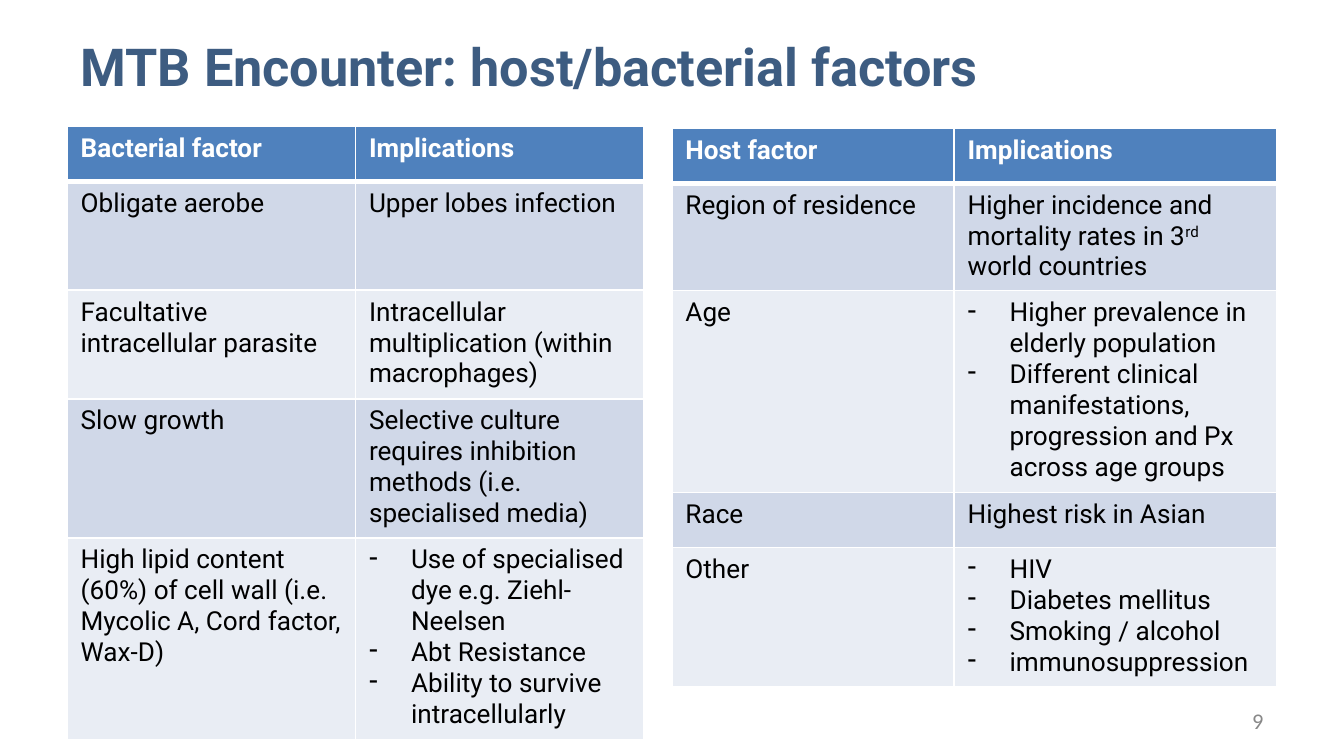
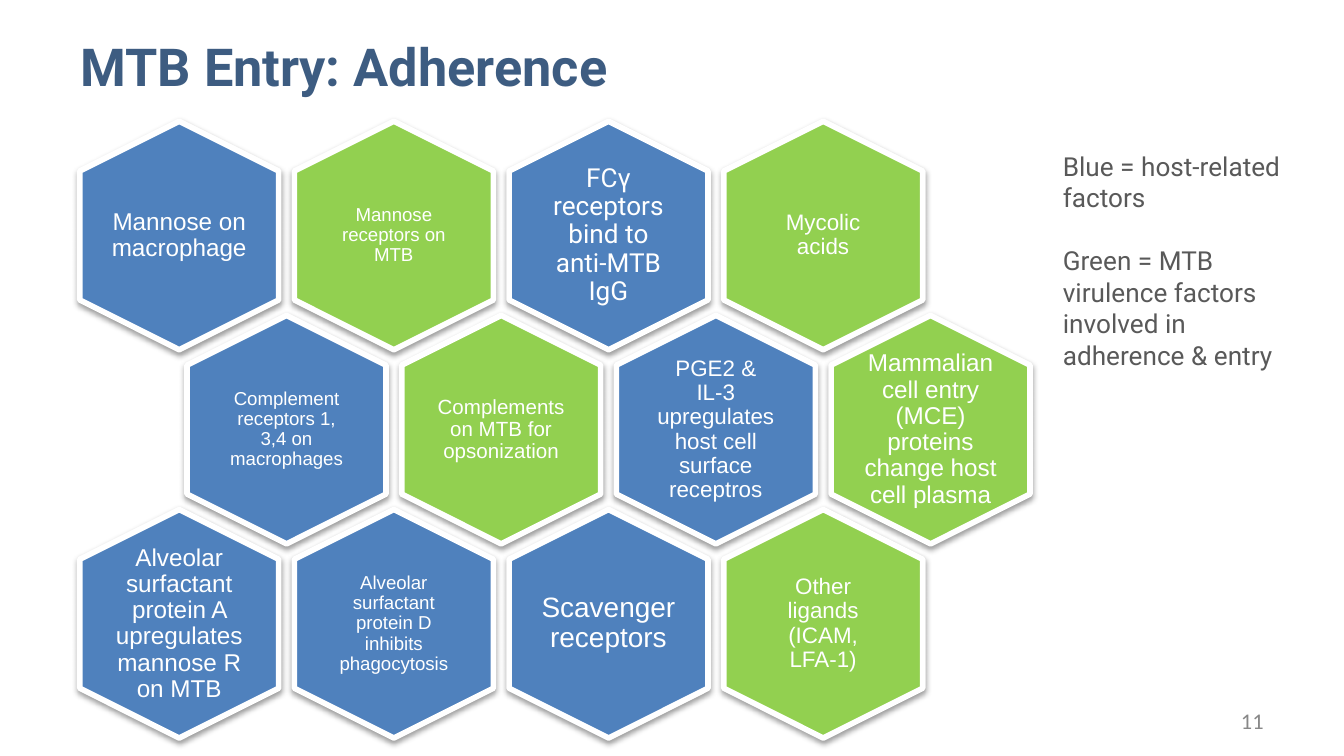
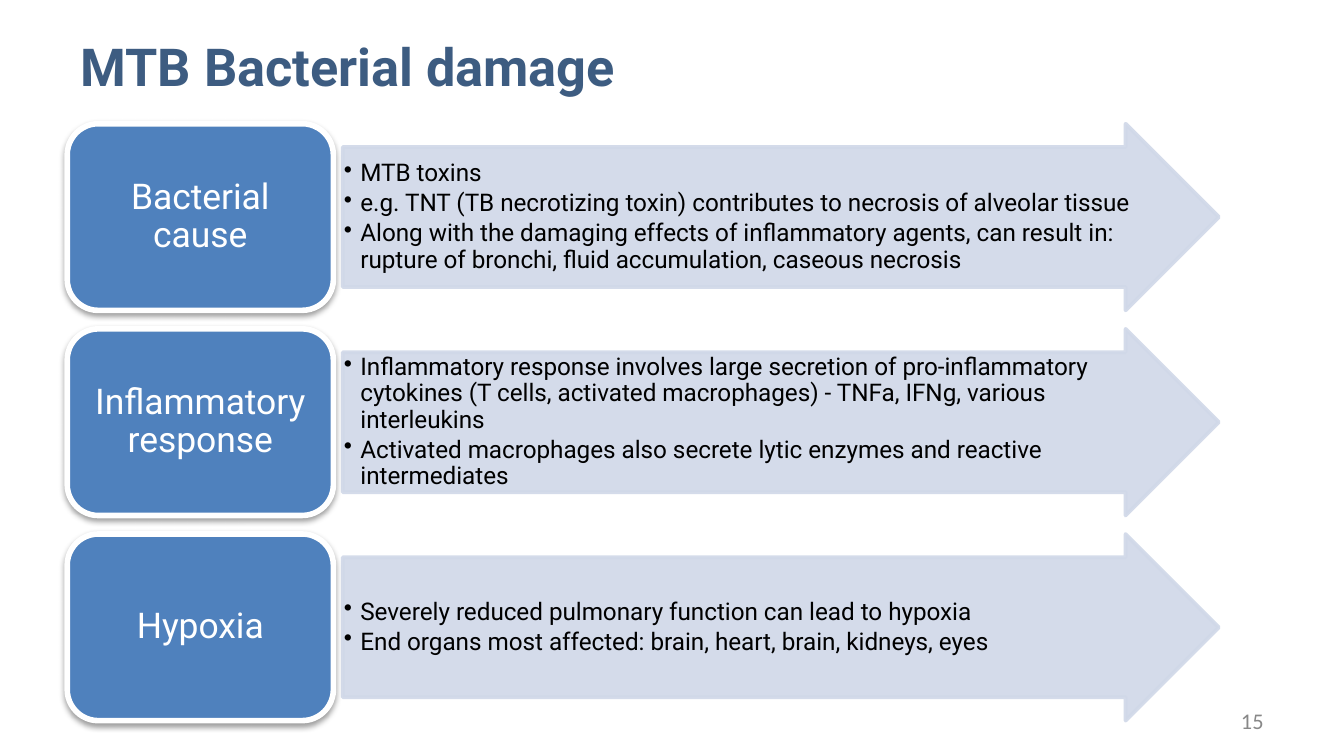
from lxml import etree
from pptx import Presentation
from pptx.dml.color import RGBColor
from pptx.enum.shapes import MSO_SHAPE
from pptx.enum.text import MSO_ANCHOR, PP_ALIGN
from pptx.oxml.ns import qn
from pptx.util import Pt

HEXAGON, CARD, ARROW = MSO_SHAPE.HEXAGON, MSO_SHAPE.ROUNDED_RECTANGLE, MSO_SHAPE.RIGHT_ARROW
TOP, MIDDLE = MSO_ANCHOR.TOP, MSO_ANCHOR.MIDDLE
LEFT, CENTER, RIGHT = PP_ALIGN.LEFT, PP_ALIGN.CENTER, PP_ALIGN.RIGHT

NAVY, BLUE, GREEN = "3D5C81", "4F81BD", "92D050"
BAND_DARK, BAND_LIGHT = "D0D8E8", "E9EDF4"
WHITE, BLACK, GREY, PAGE_GREY = "FFFFFF", "000000", "595959", "888888"

FACTOR_TABLES = [
    {
        "place": (36, 67.6, 309, 329),
        "columns": [154.5, 154.5],
        "heights": [29.5, 58.3, 58.3, 29.5, 29.5],
        "rows": [
            ("Bacterial factor", "Implications"),
            ("Obligate aerobe", "Upper lobes infection"),
            ("Facultative intracellular parasite",
             "Intracellular multiplication (within macrophages)"),
            ("Slow growth",
             "Selective culture requires inhibition methods (i.e. specialised media)"),
            ("High lipid content (60%) of cell wall (i.e. Mycolic A, Cord factor, Wax-D)",
             ["Use of specialised dye e.g. Ziehl-Neelsen", "Abt Resistance",
              "Ability to survive intracellularly"]),
        ],
    },
    {
        "place": (360, 68.6, 324, 299),
        "columns": [151.2, 172.8],
        "heights": [29.5, 57.6, 29.5, 29.5, 29.5],
        "rows": [
            ("Host factor", "Implications"),
            ("Region of residence",
             "Higher incidence and mortality rates in 3^rd^ world countries"),
            ("Age",
             ["Higher prevalence in elderly population",
              "Different clinical manifestations, progression and Px across age groups"]),
            ("Race", "Highest risk in Asian"),
            ("Other",
             ["HIV", "Diabetes mellitus", "Smoking / alcohol", "immunosuppression"]),
        ],
    },
]

ADHERENCE_ROWS = [
    [("Mannose on macrophage", BLUE, 13, "Arial"),
     ("Mannose receptors on MTB", GREEN, 10, "Arial"),
     ("FCγ receptors bind to anti-MTB IgG", BLUE, 14, "Roboto"),
     ("Mycolic acids", GREEN, 12, "Arial")],
    [("Complement receptors 1, 3,4 on macrophages", BLUE, 10, "Arial"),
     ("Complements on MTB for opsonization", GREEN, 11, "Arial"),
     ("PGE2 & IL-3 upregulates host cell surface receptros", BLUE, 12, "Arial"),
     ("Mammalian cell entry (MCE) proteins change host cell plasma", GREEN, 13, "Arial")],
    [("Alveolar surfactant protein A upregulates mannose R on MTB", BLUE, 13, "Arial"),
     ("Alveolar surfactant protein D inhibits phagocytosis", BLUE, 10, "Arial"),
     ("Scavenger receptors", BLUE, 15, "Arial"),
     ("Other ligands (ICAM, LFA-1)", GREEN, 12, "Arial")],
]
COLOUR_KEY = [
    "Blue = host-related factors",
    "Green = MTB virulence factors involved in adherence & entry",
]

DAMAGE = [
    ("Bacterial cause", [
        "MTB toxins",
        "e.g. TNT (TB necrotizing toxin) contributes to necrosis of alveolar tissue",
        "Along with the damaging effects of inflammatory agents, can result in: "
        "rupture of bronchi, fluid accumulation, caseous necrosis"]),
    ("Inflammatory response", [
        "Inflammatory response involves large secretion of pro-inflammatory cytokines "
        "(T cells, activated macrophages) - TNFa, IFNg, various interleukins",
        "Activated macrophages also secrete lytic enzymes and reactive intermediates"]),
    ("Hypoxia", [
        "Severely reduced pulmonary function can lead to hypoxia",
        "End organs most affected: brain, heart, brain, kidneys, eyes"]),
]


def rgb(colour):
    return RGBColor.from_string(colour)


def apply(target, values):
    for key, value in values.items():
        setattr(target, key, value)


def child(parent, tag, **attributes):
    return etree.SubElement(parent, qn(tag), attributes)


def write(frame, content, size, colour, font="Roboto", bold=False, bullet=None,
          indent=0, **spacing):
    lines = [content] if isinstance(content, str) else content
    for number, line in enumerate(lines):
        paragraph = frame.add_paragraph() if number else frame.paragraphs[0]
        apply(paragraph, spacing)
        if not number:
            paragraph.space_before = None
        if bullet:
            properties = paragraph._p.get_or_add_pPr()
            properties.set("marL", str(Pt(indent)))
            properties.set("indent", str(-Pt(indent)))
            child(properties, "a:buChar", char=bullet)
        for part, words in enumerate(line.split("^")):
            run = paragraph.add_run()
            run.text = words
            apply(run.font, {"size": Pt(size), "name": font, "bold": bold})
            run.font.color.rgb = rgb(colour)
            if part % 2:
                run._r.get_or_add_rPr().set("baseline", "30000")


def add_text(slide, place, content, size, colour, inset=(7.2, 3.6), anchor=MIDDLE, **style):
    frame = slide.shapes.add_textbox(*map(Pt, place)).text_frame
    across, down = map(Pt, inset)
    apply(frame, {"word_wrap": True, "vertical_anchor": anchor,
                  "margin_left": across, "margin_right": across,
                  "margin_top": down, "margin_bottom": down})
    write(frame, content, size, colour, **style)


def add_centred(slide, place, label, size, inset, font="Roboto"):
    add_text(slide, place, label, size, WHITE, inset, font=font, alignment=CENTER,
             line_spacing=0.9, space_after=Pt(size * 0.35))


def add_outlined(slide, kind, place, fill, line, width):
    shape = slide.shapes.add_shape(kind, *map(Pt, place))
    shape.shadow.inherit = False
    shape.fill.solid()
    shape.fill.fore_color.rgb = rgb(fill)
    shape.line.color.rgb = rgb(line)
    shape.line.width = Pt(width)
    return shape


def add_raised(slide, kind, place, fill):
    shape = add_outlined(slide, kind, place, fill, WHITE, 3)
    effects = shape._element.spPr.find(qn("a:effectLst"))
    shadow = child(effects, "a:outerShdw", blurRad=str(Pt(3.1)), dist=str(Pt(1.6)),
                   dir="5400000", rotWithShape="0")
    child(child(shadow, "a:srgbClr", val=BLACK), "a:alpha", val="38000")
    return shape


def add_border(cell, side, width):
    line = child(cell._tc.get_or_add_tcPr(), f"a:{side}", w=str(Pt(width)))
    child(child(line, "a:solidFill"), "a:srgbClr", val=WHITE)


def add_factor_table(slide, place, columns, heights, rows):
    holder = slide.shapes.add_table(len(rows), len(columns), *map(Pt, place))
    table = holder.table
    for column, width in zip(table.columns, columns):
        column.width = Pt(width)
    for r, (row, height) in enumerate(zip(rows, heights)):
        table.rows[r].height = Pt(height)
        for c, content in enumerate(row):
            cell = table.cell(r, c)
            for side in ("lnL", "lnR", "lnT", "lnB"):
                heavy = (r, side) in ((0, "lnB"), (1, "lnT"))
                add_border(cell, side, 3 if heavy else 1)
            cell.fill.solid()
            band = BAND_DARK if r % 2 else BAND_LIGHT
            cell.fill.fore_color.rgb = rgb(band if r else BLUE)
            write(cell.text_frame, content, 14, BLACK if r else WHITE, bold=r == 0,
                  bullet="-" if isinstance(content, list) else None, indent=22.5)
    holder.height = Pt(place[3])


def add_page(deck, title, number):
    slide = deck.slides.add_slide(deck.slide_layouts[6])
    add_text(slide, (36, 11, 648, 48), title, 28, NAVY, (7.2, 7.2), bold=True)
    add_text(slide, (516, 375, 168, 21.6), number, 12, PAGE_GREY, font="Calibri",
             alignment=RIGHT)
    return slide


def build_factors(deck):
    slide = add_page(deck, "MTB Encounter: host/bacterial factors", "9")
    for factors in FACTOR_TABLES:
        add_factor_table(slide, **factors)


def build_adherence(deck):
    slide = add_page(deck, "MTB Entry: Adherence", "11")
    length, breadth, text_width, text_height = 122.4, 106.6, 73.6, 84.2
    step_x, step_y = 115, 104
    for r, row in enumerate(ADHERENCE_ROWS):
        for c, (label, fill, size, font) in enumerate(row):
            middle_x = 96 + step_x * (c + r % 2 / 2)
            middle_y = 126.2 + step_y * r
            cell = add_raised(slide, HEXAGON, (middle_x - length / 2, middle_y - breadth / 2,
                                               length, breadth), fill)
            cell.rotation = 90
            inset = size * 0.3 if (r + c) % 2 else 0
            add_centred(slide, (middle_x - text_width / 2, middle_y - text_height / 2,
                                text_width, text_height), label, size, (inset, inset), font)
    add_text(slide, (562.3, 77, 131.8, 126), COLOUR_KEY, 14, GREY, anchor=TOP,
             alignment=LEFT, space_before=Pt(17))


def build_damage(deck):
    slide = add_page(deck, "MTB Bacterial damage", "15")
    height = 100
    for number, (cause, effects) in enumerate(DAMAGE):
        top = 66.3 + 109.9 * number
        arrow = add_outlined(slide, ARROW, (183.6, top, 469.4, height),
                             BAND_DARK, BAND_DARK, 2)
        arrow.adjustments[0], arrow.adjustments[1] = 0.75, 0.5
        for colour in arrow._element.spPr.iter(qn("a:srgbClr")):
            child(colour, "a:alpha", val="90000")
        add_text(slide, (183.6, top + height / 8, 432, height * 0.75), effects, 13, BLACK,
                 (0.7, 0.7), bullet="•", indent=8.8, line_spacing=0.9, space_after=Pt(2))
        add_raised(slide, CARD, (36, top, 142.6, height), BLUE)
        add_centred(slide, (40.9, top + 4.9, 132.8, height - 9.8), cause, 19, (5.8, 2.9))


def main():
    deck = Presentation()
    apply(deck, {"slide_width": Pt(720), "slide_height": Pt(405)})
    build_factors(deck)
    build_adherence(deck)
    build_damage(deck)
    deck.save("out.pptx")


if __name__ == "__main__":
    main()
